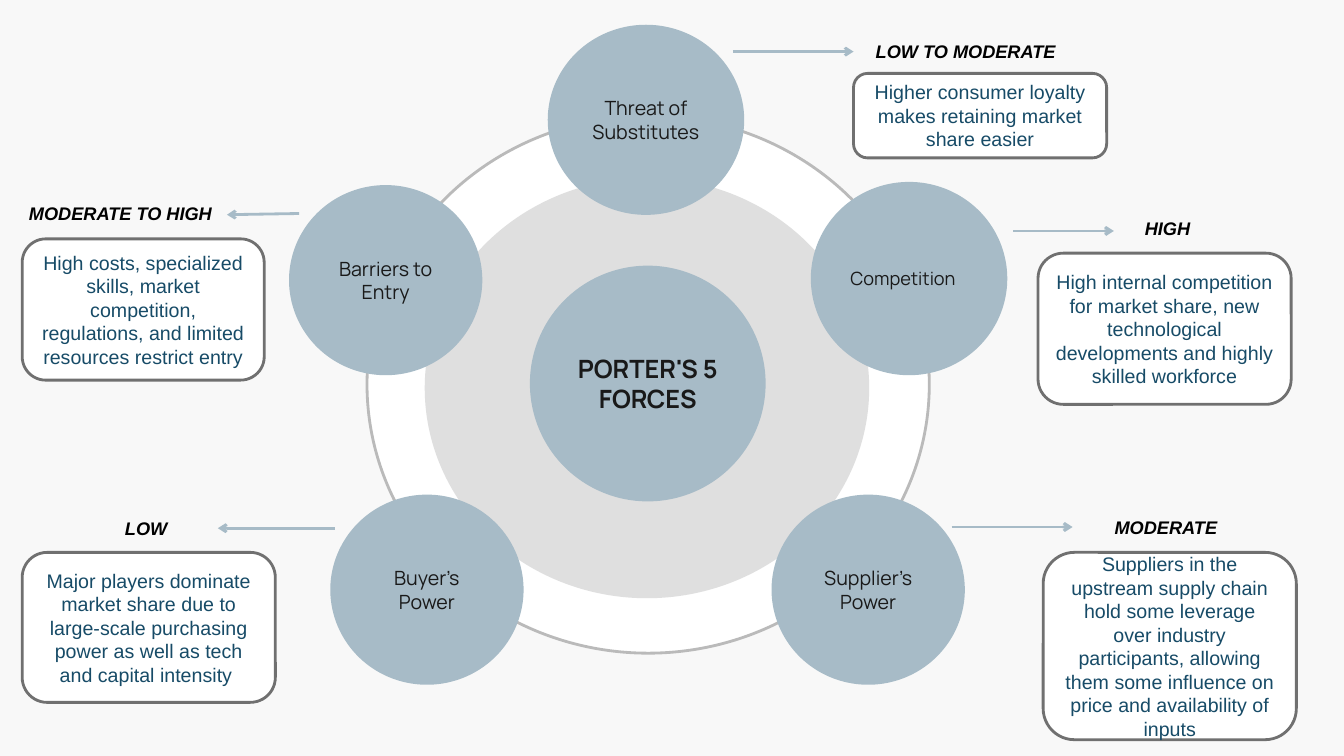
from lxml import etree
from pptx import Presentation
from pptx.dml.color import RGBColor
from pptx.enum import shapes, text
from pptx.oxml import ns
from pptx.util import Cm, Pt

PAGE = RGBColor(0xF8, 0xF8, 0xF8)
WHITE = RGBColor(0xFF, 0xFF, 0xFF)
RING = RGBColor(0xBA, 0xBA, 0xBA)
DISC = RGBColor(0xDF, 0xDF, 0xDF)
BLUE = RGBColor(0xA7, 0xBB, 0xC7)
INK = RGBColor(0x19, 0x19, 0x19)
BLACK = RGBColor(0, 0, 0)
EDGE = RGBColor(0x70, 0x70, 0x70)
NAVY = RGBColor(0x17, 0x4B, 0x67)

ROUND = shapes.MSO_SHAPE.FLOWCHART_CONNECTOR
CARD = shapes.MSO_SHAPE.ROUNDED_RECTANGLE
MID, LEFT = text.PP_ALIGN.CENTER, text.PP_ALIGN.LEFT

# Text formats
HUB = dict(name="Manrope", size=Pt(18), bold=True)
FORCE = dict(name="Manrope", size=Pt(14))
LEVEL = dict(name="Arial", size=Pt(13), bold=True, italic=True)
NOTE = dict(name="Arial", size=Pt(14))

deck = Presentation()
deck.slide_width, deck.slide_height = Cm(33.87), Cm(19.05)
slide = deck.slides.add_slide(deck.slide_layouts[6])
slide.background.fill.solid()
slide.background.fill.fore_color.rgb = PAGE


def draw(kind, box, fill, line):
    shape = slide.shapes.add_shape(kind, *map(Cm, box))
    shape.shadow.inherit = False
    shape.fill.solid()
    shape.fill.fore_color.rgb = fill
    shape.line.color.rgb = line
    shape.line.width = Pt(2)
    return shape


def write(shape, words, form, color, align=MID):
    frame = shape.text_frame
    frame.word_wrap = True
    para = frame.paragraphs[0]
    para.alignment = align
    run = para.add_run()
    run.text = words
    for key, value in form.items():
        setattr(run.font, key, value)
    run.font.color.rgb = color


# Rings and hub
draw(ROUND, (9.25, 2.92, 14.17, 13.54), WHITE, RING)
draw(ROUND, (10.74, 4.52, 11.13, 10.52), DISC, DISC)
hub = draw(ROUND, (13.39, 6.73, 5.87, 5.87), BLUE, BLUE)
write(hub, "PORTER'S 5 FORCES", HUB, INK)

# Force, its circle; level, its left, top, width; note, its card; arrow ends
forces = [
    ("Threat of Substitutes", (13.84, 0.66, 4.88, 4.72),
     "LOW TO MODERATE", (21.82, 0.89, 5.21),
     "Higher consumer loyalty makes retaining market share easier",
     (21.51, 1.85, 6.38, 2.13), (18.47, 1.3, 21.51, 1.3)),
    ("Buyer’s Power", (8.36, 12.5, 4.8, 4.72),
     "LOW", (2.9, 12.9, 2.34),
     "Major players dominate market share due to large-scale purchasing "
     "power as well as tech and capital intensity ",
     (0.56, 13.92, 6.38, 3.78), (8.43, 13.31, 5.49, 13.31)),
    ("Barriers to Entry", (7.32, 4.7, 4.8, 4.72),
     "MODERATE TO HIGH", (0.48, 4.98, 5.61),
     "High costs, specialized skills, market competition, regulations, "
     "and limited resources restrict entry",
     (0.56, 6.02, 6.1, 3.56), (7.54, 5.38, 5.72, 5.41)),
    ("Competition", (20.47, 4.62, 4.88, 4.8),
     "HIGH", (28.6, 5.36, 1.8),
     "High internal competition for market share, new technological "
     "developments and highly skilled workforce",
     (26.16, 6.38, 6.38, 3.81), (25.53, 5.82, 28.07, 5.82)),
    ("Supplier's Power", (19.48, 12.5, 4.8, 4.72),
     "MODERATE", (27.84, 12.88, 3.68),
     "Suppliers in the upstream supply chain hold some leverage over "
     "industry participants, allowing them some influence on price and "
     "availability of inputs",
     (26.29, 13.92, 6.38, 4.72), (23.98, 13.28, 27.03, 13.28)),
]

for force, disc, level, spot, note, card, ends in forces:
    # Circle on the ring
    ball = draw(ROUND, disc, BLUE, BLUE)
    if force == "Competition":
        write(ball, force, FORCE | dict(size=Pt(13)), INK, LEFT)
    else:
        write(ball, force, FORCE, INK)

    # Level and note
    label = slide.shapes.add_textbox(*map(Cm, (*spot, 0.81)))
    write(label, level, LEVEL, BLACK, LEFT)
    write(draw(CARD, card, WHITE, EDGE), note, NOTE, NAVY)

    # Arrow to the level
    arrow = slide.shapes.add_connector(
        shapes.MSO_CONNECTOR.STRAIGHT, *map(Cm, ends))
    arrow.line.color.rgb = BLUE
    arrow.line.width = Pt(2)
    props = arrow._element.spPr
    head = etree.SubElement(props.find(ns.qn("a:ln")), ns.qn("a:tailEnd"))
    head.set("type", "arrow")
    etree.SubElement(props, ns.qn("a:effectLst"))

deck.save("out.pptx")
